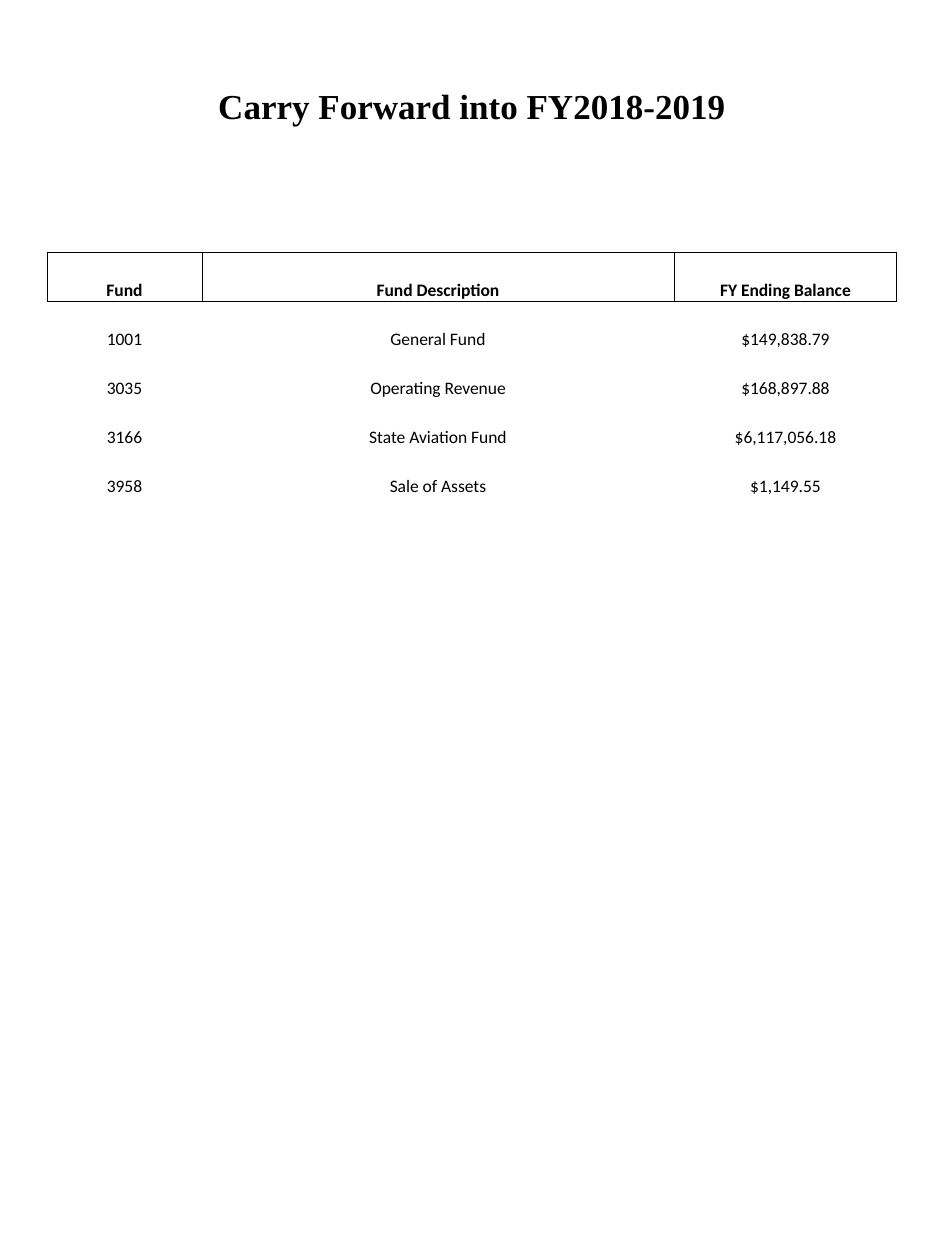
from pptx import Presentation
from pptx.dml.color import RGBColor
from pptx.enum.text import MSO_ANCHOR, PP_ALIGN
from pptx.oxml.ns import qn
from pptx.util import Emu, Pt
from lxml import etree

CENTER = PP_ALIGN.CENTER
MIDDLE, BOTTOM = MSO_ANCHOR.MIDDLE, MSO_ANCHOR.BOTTOM
PX = 914400 // 126
BLACK = "000000"

# Content
TITLE = "Carry Forward into FY2018-2019"
FUNDS = [
    ("Fund", "Fund Description", "FY Ending Balance"),
    ("1001", "General Fund", "$149,838.79"),
    ("3035", "Operating Revenue", "$168,897.88"),
    ("3166", "State Aviation Fund", "$6,117,056.18"),
    ("3958", "Sale of Assets", "$1,149.55"),
    ("", "", ""),
]

# Layout in px
SLIDE_SIZE = (945, 1260)
TITLE_BOX = (47, 0, 850, 210)
TABLE_LEFT, TABLE_TOP = 47, 252
COLUMN_WIDTHS = (155, 472, 223)
ROW_HEIGHT = 49


def px(length):
    return Emu(length * PX)


def color(hex_string):
    return RGBColor.from_string(hex_string)


def write(frame, text, font="Calibri", size=10, bold=False, fill=BLACK):
    paragraph = frame.paragraphs[0]
    paragraph.alignment = CENTER
    paragraph.font.size = Pt(size)
    if not text:
        return
    run = paragraph.add_run()
    run.text = text
    run.font.name = font
    run.font.size = Pt(size)
    run.font.bold = bold
    run.font.color.rgb = color(fill)


def set_borders(cell, ruled_sides):
    properties = cell._tc.get_or_add_tcPr()
    for side in "LRTB":
        line = etree.SubElement(properties, qn(f"a:ln{side}"), w=str(Pt(0.5)))
        if side in ruled_sides:
            solid = etree.SubElement(line, qn("a:solidFill"))
            etree.SubElement(solid, qn("a:srgbClr"), val=BLACK)
        else:
            etree.SubElement(line, qn("a:noFill"))


prs = Presentation()
prs.slide_width, prs.slide_height = map(px, SLIDE_SIZE)
slide = prs.slides.add_slide(prs.slide_layouts[5])

# Title
title = slide.shapes.title
title.left, title.top, title.width, title.height = map(px, TITLE_BOX)
title.text_frame.vertical_anchor = MIDDLE
write(title.text_frame, TITLE, font="Times New Roman", size=20, bold=True)

# Fund table: a boxed header over plain rows
table = slide.shapes.add_table(
    len(FUNDS), len(COLUMN_WIDTHS), px(TABLE_LEFT), px(TABLE_TOP),
    px(sum(COLUMN_WIDTHS)), px(ROW_HEIGHT * len(FUNDS))).table
table.first_row = table.horz_banding = False
for column, width in zip(table.columns, COLUMN_WIDTHS):
    column.width = px(width)

for row_index, fund in enumerate(FUNDS):
    table.rows[row_index].height = px(ROW_HEIGHT)
    for column_index, text in enumerate(fund):
        cell = table.cell(row_index, column_index)
        cell.vertical_anchor = BOTTOM
        cell.margin_left = cell.margin_right = cell.margin_top = px(1)
        cell.margin_bottom = 0
        set_borders(cell, {0: "LRTB", 1: "T"}.get(row_index, ""))
        cell.fill.background()
        write(cell.text_frame, text, bold=row_index == 0)

prs.save("out.pptx")
